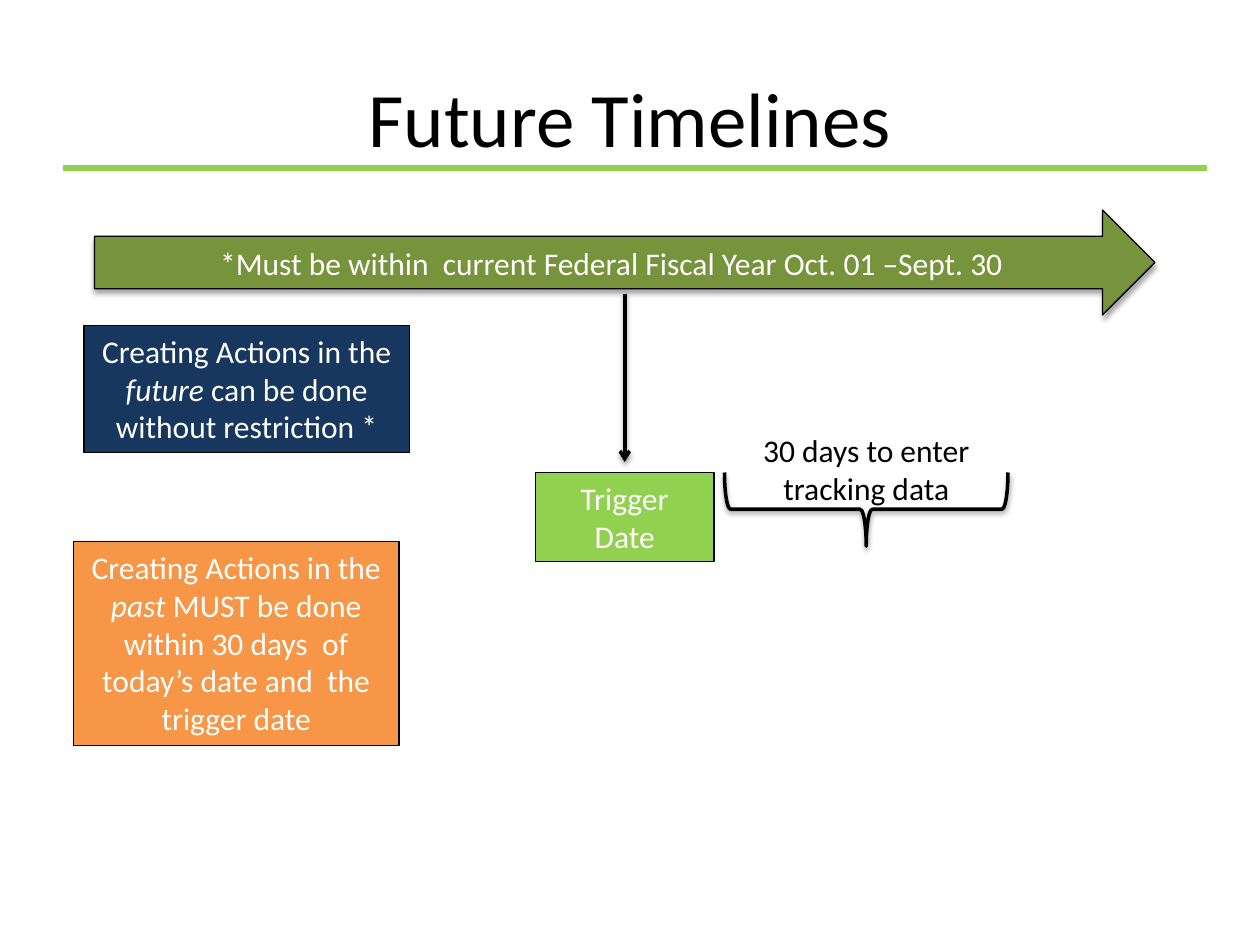
from dataclasses import dataclass

from lxml import etree
from pptx import Presentation
from pptx import util as u
from pptx.dml.color import RGBColor
from pptx.enum import shapes, text
from pptx.oxml import ns


@dataclass(frozen=True)
class Theme:
    font: str = "Calibri"
    title_size: int = 44
    body_size: int = 18
    ink: str = "000000"
    paper: str = "FFFFFF"
    lime: str = "92D050"
    olive: str = "77933C"
    navy: str = "17375E"
    orange: str = "F79646"


THEME = Theme()
COLS, ROWS = 120, 90  # twelve grid units to the inch
UNIT = u.Inches(10) / COLS


def grid(*units):
    """Turn grid units into slide lengths."""
    return [u.Emu(round(n * UNIT)) for n in units]


def set_line(sp, color, width):
    sp.line.color.rgb = RGBColor.from_string(color)
    sp.line.width = u.Pt(width)


def set_shadow(sp, alpha=None, distance=1.6):
    """Write the effect list: a soft downward shadow, or none."""
    props = sp._element.spPr
    effects = etree.SubElement(props, ns.qn("a:effectLst"))
    if alpha is None:
        return
    shadow = etree.SubElement(
        effects, ns.qn("a:outerShdw"), blurRad=str(u.Pt(3.1)),
        dist=str(u.Pt(distance)), dir="5400000", rotWithShape="0")
    color = etree.SubElement(shadow, ns.qn("a:srgbClr"), val=THEME.ink)
    etree.SubElement(color, ns.qn("a:alpha"), val=str(alpha * 1000))


def write(sp, parts, color, size=THEME.body_size, anchor=text.MSO_ANCHOR.TOP):
    """Centre the parts in one paragraph; every second part is italic."""
    tf = sp.text_frame
    tf.word_wrap = True
    tf.vertical_anchor = anchor
    p = tf.paragraphs[0]
    p.alignment = text.PP_ALIGN.CENTER
    for i, part in enumerate(parts):
        r = p.add_run()
        r.text = part
        r.font.name = THEME.font
        r.font.size = u.Pt(size)
        r.font.italic = i % 2 == 1
        r.font.color.rgb = RGBColor.from_string(color)


def add_label(slide, box, words, size=THEME.body_size,
              anchor=text.MSO_ANCHOR.TOP):
    sp = slide.shapes.add_textbox(*grid(*box))
    write(sp, [words], THEME.ink, size, anchor)


def add_box(slide, box, fill, parts, kind=shapes.MSO_SHAPE.RECTANGLE,
            anchor=text.MSO_ANCHOR.TOP, shadow=None):
    sp = slide.shapes.add_shape(kind, *grid(*box))
    sp.fill.solid()
    sp.fill.fore_color.rgb = RGBColor.from_string(fill)
    set_line(sp, THEME.ink, 0.75)
    set_shadow(sp, shadow, 1.8)
    write(sp, parts, THEME.paper, anchor=anchor)


def add_line(slide, ends, color, width, arrow=False, shadow=None):
    sp = slide.shapes.add_connector(shapes.MSO_CONNECTOR.STRAIGHT, *grid(*ends))
    set_line(sp, color, width)
    if arrow:
        etree.SubElement(sp.line._get_or_add_ln(), ns.qn("a:tailEnd"), type="arrow")
    set_shadow(sp, shadow)


def add_brace(slide, box):
    sp = slide.shapes.add_shape(shapes.MSO_SHAPE.LEFT_BRACE, *grid(*box))
    sp.rotation = 270
    sp.fill.background()
    set_line(sp, THEME.ink, 2)
    set_shadow(sp, 38)


def main():
    prs = Presentation()
    prs.slide_width, prs.slide_height = grid(COLS, ROWS)
    slide = prs.slides.add_slide(prs.slide_layouts[6])
    middle = text.MSO_ANCHOR.MIDDLE

    # Title and rule
    add_line(slide, (6, 16, 115, 16), THEME.lime, 3)
    add_label(slide, (6, 3.6, 108, 15), "Future Timelines",
              THEME.title_size, middle)

    # Fiscal year arrow
    add_box(slide, (9, 20, 101, 10), THEME.olive,
            ["*Must be within  current Federal Fiscal Year Oct. 01 –Sept. 30"],
            shapes.MSO_SHAPE.RIGHT_ARROW, middle, shadow=35)

    # Trigger date and its pointer
    add_box(slide, (51, 45, 17, 8.5), THEME.lime, ["Trigger Date"])
    add_line(slide, (59.5, 28, 59.5, 44), THEME.ink, 2, arrow=True, shadow=38)

    # Tracking window
    add_brace(slide, (79, 35, 7, 27))
    add_label(slide, (69, 40.5, 27, 8.5), "30 days to enter tracking data")

    # Rules for future and past actions
    add_box(slide, (8, 31, 31, 12.1), THEME.navy,
            ["Creating Actions in the ", "future",
             " can be done without restriction *"])
    add_box(slide, (7, 51.6, 31, 19.4), THEME.orange,
            ["Creating Actions in the ", "past",
             " MUST be done within 30 days  of today’s date and  the trigger date"])

    prs.save("out.pptx")


if __name__ == "__main__":
    main()
